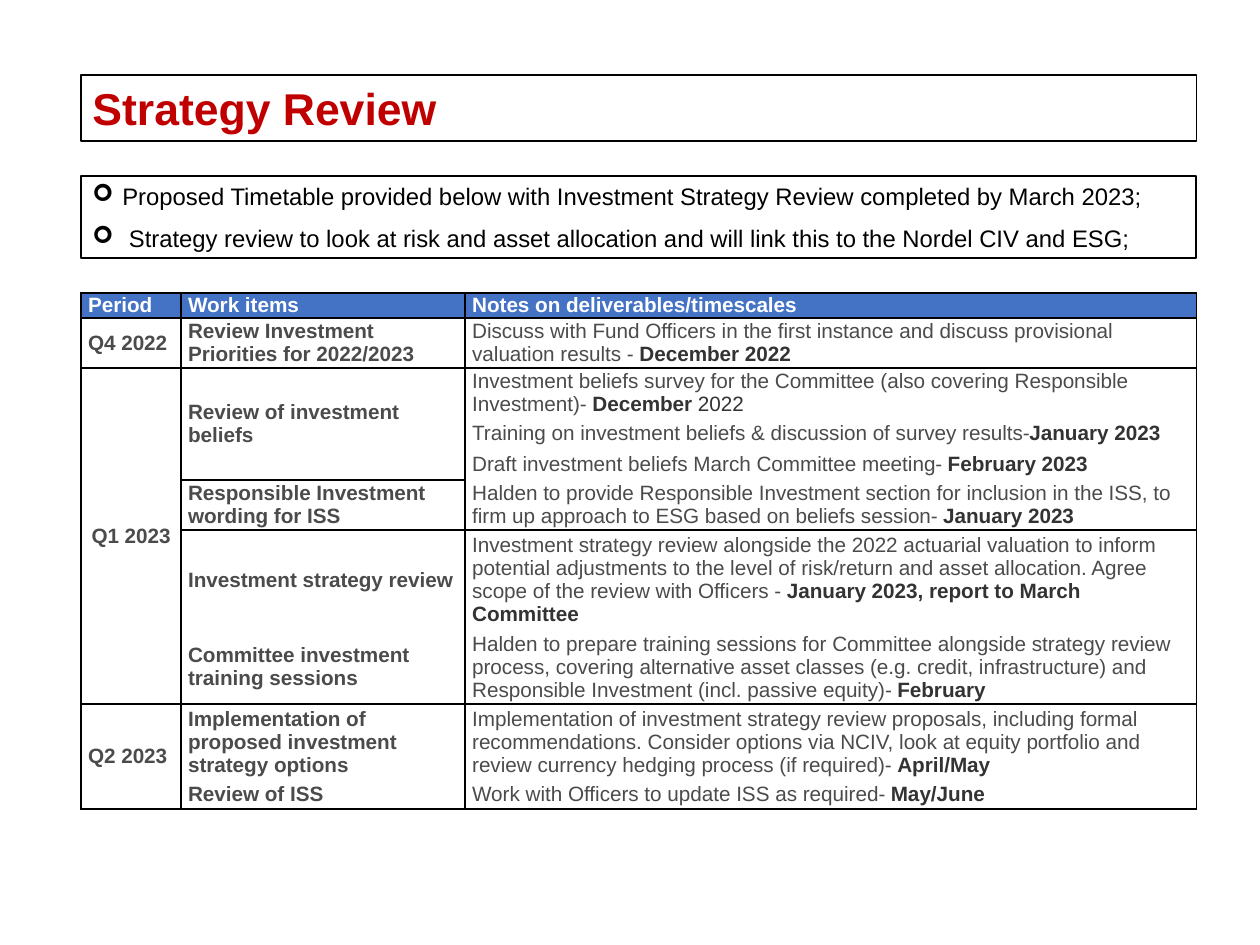
from dataclasses import dataclass

from lxml.etree import SubElement
from pptx import Presentation
from pptx.dml.color import RGBColor
from pptx.enum.shapes import MSO_SHAPE as Shape
from pptx.enum.text import MSO_ANCHOR as Anchor, MSO_AUTO_SIZE as AutoSize, PP_ALIGN as Align
from pptx.oxml.ns import qn
from pptx.util import Emu, Inches, Pt

EMU_PER_PX = 914400 / 114.5
FONT = "Arial"
BLACK, WHITE, RED, BLUE = "000000", "FFFFFF", "C00000", "4472C4"
BODY_GREY, DATE_GREY = "4B4B4B", "333333"
LEFT, WIDTH = 81, 1115
COLUMN_WIDTHS = (100, 284, 731)
PERIOD, WORK, NOTES = range(3)
HEADINGS = ("Period", "Work items", "Notes on deliverables/timescales")


@dataclass
class Span:
    text: str
    color: str = BODY_GREY
    bold: bool = True


@dataclass
class TimetableRow:
    """Empty period or work text continues the cell above; open_above lists columns with no top line."""
    height: int
    period: str
    work: str
    note: str
    date: str
    date_tail: str = ""
    open_above: tuple[int, ...] = ()

    def columns(self) -> list[list[Span]]:
        notes = [Span(self.note, bold=False), Span(self.date, DATE_GREY)]
        if self.date_tail:
            notes.append(Span(self.date_tail, DATE_GREY, False))
        return [[Span(self.period)], [Span(self.work)], notes]


BULLETS = (
    "Proposed Timetable provided below with Investment Strategy Review completed by March 2023;",
    " Strategy review to look at risk and asset allocation and will link this to the Nordel CIV and ESG;",
)

ROWS = (
    TimetableRow(50, "Q4 2022", "Review Investment Priorities for 2022/2023",
                 "Discuss with Fund Officers in the first instance and discuss provisional "
                 "valuation results - ", "December 2022"),
    TimetableRow(50, "Q1 2023", "Review of investment beliefs",
                 "Investment beliefs survey for the Committee (also covering Responsible "
                 "Investment)- ", "December", " 2022"),
    TimetableRow(31, "", "", "Training on investment beliefs & discussion of survey results-",
                 "January 2023", open_above=(NOTES,)),
    TimetableRow(31, "", "", "Draft investment beliefs March Committee meeting- ",
                 "February 2023", open_above=(NOTES,)),
    TimetableRow(50, "", "Responsible Investment wording for ISS",
                 "Halden to provide Responsible Investment section for inclusion in the ISS, to "
                 "firm up approach to ESG based on beliefs session- ", "January 2023",
                 open_above=(NOTES,)),
    TimetableRow(100, "", "Investment strategy review",
                 "Investment strategy review alongside the 2022 actuarial valuation to inform "
                 "potential adjustments to the level of risk/return and asset allocation. Agree "
                 "scope of the review with Officers - ", "January 2023, report to March Committee"),
    TimetableRow(74, "", "Committee investment training sessions",
                 "Halden to prepare training sessions for Committee alongside strategy review "
                 "process, covering alternative asset classes (e.g. credit, infrastructure) and "
                 "Responsible Investment (incl. passive equity)- ", "February",
                 open_above=(WORK, NOTES)),
    TimetableRow(76, "Q2 2023", "Implementation of proposed investment strategy options",
                 "Implementation of investment strategy review proposals, including formal "
                 "recommendations. Consider options via NCIV, look at equity portfolio and "
                 "review currency hedging process (if required)- ", "April/May"),
    TimetableRow(29, "", "Review of ISS", "Work with Officers to update ISS as required- ",
                 "May/June", open_above=(WORK, NOTES)),
)
HEADER_HEIGHT = 25


def px(length: int) -> Emu:
    return Emu(round(length * EMU_PER_PX))


def rgb(color: str) -> RGBColor:
    return RGBColor.from_string(color)


def format_font(font, size: int, color: str, bold: bool) -> None:
    font.name, font.size, font.bold = FONT, Pt(size), bold
    font.color.rgb = rgb(color)


def place(shape, top: int, height: int, line_width: float) -> None:
    shape.left, shape.top, shape.width, shape.height = map(px, (LEFT, top, WIDTH, height))
    shape.line.color.rgb = rgb(BLACK)
    shape.line.width = Pt(line_width)
    frame = shape.text_frame
    frame.word_wrap = True
    frame.auto_size = AutoSize.NONE
    frame.vertical_anchor = Anchor.MIDDLE


def draw_title(slide) -> None:
    title = slide.shapes.title
    place(title, 75, 66, 0.75)
    title.text_frame.text = "Strategy Review"
    para = title.text_frame.paragraphs[0]
    para.alignment = Align.LEFT
    format_font(para.runs[0].font, 28, RED, True)


def draw_bullets(slide) -> None:
    box = slide.shapes.add_shape(Shape.RECTANGLE, 0, 0, 0, 0)
    box.shadow.inherit = False
    box.fill.background()
    place(box, 176, 82, 1.25)
    box.text_frame.text = "\n".join(BULLETS)
    for para in box.text_frame.paragraphs:
        para.alignment = Align.LEFT
        para.space_before = para.space_after = Pt(4.1)
        format_font(para.runs[0].font, 15, BLACK, False)
        properties = para._p.get_or_add_pPr()
        properties.set("marL", str(px(30)))
        properties.set("indent", str(-px(30)))
        SubElement(properties, qn("a:buFont"), typeface="Wingdings")
        SubElement(properties, qn("a:buChar"), char="➢")


def set_borders(cell, top: bool, bottom: bool) -> None:
    properties = cell._tc.get_or_add_tcPr()
    for side, shown in (("L", True), ("R", True), ("T", top), ("B", bottom)):
        line = SubElement(properties, qn(f"a:ln{side}"), w=str(Pt(1)))
        if shown:
            SubElement(SubElement(line, qn("a:solidFill")), qn("a:srgbClr"), val=BLACK)
        else:
            SubElement(line, qn("a:noFill"))


def fill_cell(cell, spans: list[Span], fill: str = "") -> None:
    cell.vertical_anchor = Anchor.MIDDLE
    cell.margin_left = cell.margin_right = px(7)
    cell.margin_top = cell.margin_bottom = 0
    para = cell.text_frame.paragraphs[0]
    for span in spans:
        if span.text:
            run = para.add_run()
            run.text = span.text
            format_font(run.font, 13, span.color, span.bold)
    if fill:
        cell.fill.solid()
        cell.fill.fore_color.rgb = rgb(fill)
    else:
        cell.fill.background()


def merge_continued(table, column: int, texts: list[str]) -> None:
    """Merge each filled cell with the empty ones that follow it."""
    starts = [index for index, text in enumerate(texts) if text]
    for start, following in zip(starts, starts[1:] + [len(texts)]):
        if following - start > 1:
            table.cell(start + 1, column).merge(table.cell(following, column))


def draw_timetable(slide) -> None:
    heights = [HEADER_HEIGHT] + [row.height for row in ROWS]
    frame = slide.shapes.add_table(len(heights), len(COLUMN_WIDTHS), px(LEFT), px(293),
                                   px(WIDTH), px(sum(heights)))
    table = frame.table
    table.horz_banding = False
    for column, width in zip(table.columns, COLUMN_WIDTHS):
        column.width = px(width)
    for row, height in zip(table.rows, heights):
        row.height = px(height)

    for column, heading in enumerate(HEADINGS):
        cell = table.cell(0, column)
        set_borders(cell, True, True)
        fill_cell(cell, [Span(heading, WHITE)], BLUE)
    open_below = [row.open_above for row in ROWS[1:]] + [()]
    for index, (row, below) in enumerate(zip(ROWS, open_below), start=1):
        for column, spans in enumerate(row.columns()):
            cell = table.cell(index, column)
            set_borders(cell, column not in row.open_above, column not in below)
            fill_cell(cell, spans)
            if row.period == "Q1 2023" and column == PERIOD:
                cell.text_frame.paragraphs[0].alignment = Align.CENTER
    merge_continued(table, PERIOD, [row.period for row in ROWS])
    merge_continued(table, WORK, [row.work for row in ROWS])


def main() -> None:
    deck = Presentation()
    deck.slide_width, deck.slide_height = Inches(11), Inches(8.25)
    slide = deck.slides.add_slide(deck.slide_layouts[5])
    draw_title(slide)
    draw_bullets(slide)
    draw_timetable(slide)
    deck.save("out.pptx")


if __name__ == "__main__":
    main()
